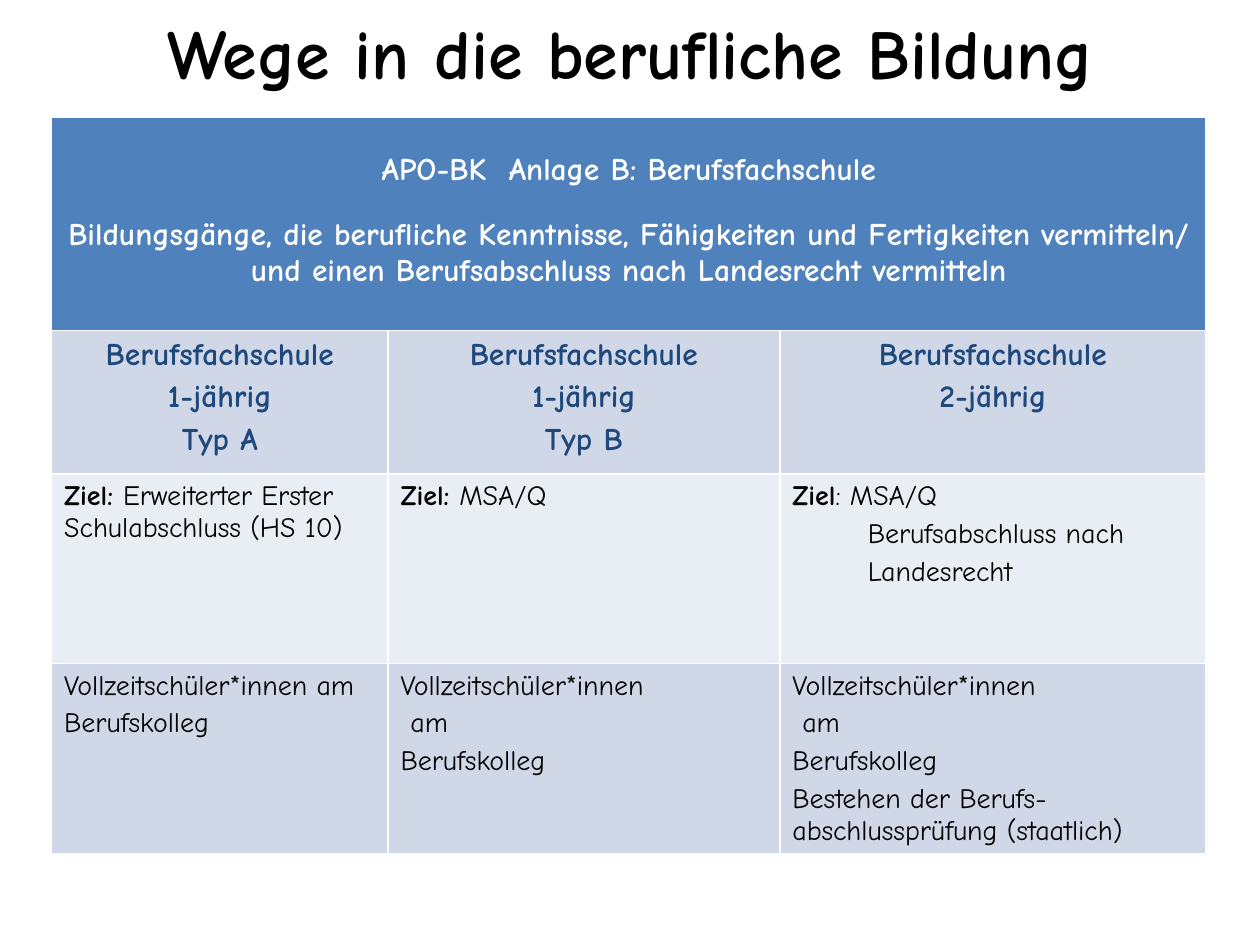
from pptx import Presentation
from pptx import util as u
from pptx.dml.color import RGBColor
from pptx.enum import text

FONT = "Comic Neue"
BLACK, WHITE, NAVY = "000000", "FFFFFF", "1F497D"
BLUE, BAND, PALE = "4F81BD", "D0D8E8", "E9EDF4"


def paint(obj, hue):
    obj.rgb = RGBColor.from_string(hue)


def write(frame, paras, size, hue, align):
    for n, (indent, runs) in enumerate(paras):
        para = frame.paragraphs[0] if n == 0 else frame.add_paragraph()
        para.alignment = align
        para.space_before = u.Pt(size * 0.2 if n else 0)
        if indent:
            para._p.get_or_add_pPr().set("marL", str(u.Cm(indent)))
        for words, bold in runs:
            run = para.add_run()
            run.text = words
            run.font.name = FONT
            run.font.size = u.Pt(size)
            run.font.bold = bold
            paint(run.font.color, hue)


MID, LEFT = text.PP_ALIGN.CENTER, text.PP_ALIGN.LEFT

deck = Presentation()
deck.slide_width, deck.slide_height = u.Cm(25.4), u.Cm(19.05)
slide = deck.slides.add_slide(deck.slide_layouts[5])

title = slide.shapes.title
title.left, title.top = u.Cm(1.27), u.Cm(-0.56)
title.width, title.height = u.Cm(22.86), u.Cm(3.18)
title.text_frame.vertical_anchor = text.MSO_ANCHOR.MIDDLE
write(title.text_frame, [(0, [("Wege in die berufliche Bildung", True)])], 40, BLACK, MID)

wide = [6.78, 7.9, 8.59]
high = [4.3, 2.9, 3.82, 3.82]
grid = slide.shapes.add_table(
    4, 3, u.Cm(1.04), u.Cm(2.36), u.Cm(sum(wide)), u.Cm(sum(high))
).table
for col, size in zip(grid.columns, wide):
    col.width = u.Cm(size)
for row, size in zip(grid.rows, high):
    row.height = u.Cm(size)

head = grid.cell(0, 0)
head.merge(grid.cell(0, 2))
head.fill.solid()
paint(head.fill.fore_color, BLUE)
head.margin_top = u.Cm(0.7)
write(head.text_frame, [
    (0, [("APO-BK  Anlage B: Berufsfachschule", True)]),
    (0, [("Bildungsgänge, die berufliche Kenntnisse, Fähigkeiten und Fertigkeiten "
          "vermitteln/ und einen Berufsabschluss nach Landesrecht vermitteln", True)]),
], 18, WHITE, MID)
head.text_frame.paragraphs[1].space_before = u.Pt(16.6)

kinds = [["1-jährig", "Typ A"], ["1-jährig", "Typ B"], ["2-jährig"]]
types = [[(0, [(line, True)]) for line in ["Berufsfachschule"] + kind] for kind in kinds]
goals = [
    [(0, [("Ziel: ", True), ("Erweiterter Erster Schulabschluss (HS 10)", False)])],
    [(0, [("Ziel: ", True), ("MSA/Q", False)])],
    [(0, [("Ziel", True), (": MSA/Q", False)]),
     (1.52, [("Berufsabschluss nach", False)]),
     (1.52, [("Landesrecht", False)])],
]
split = [
    (0, [("Vollzeitschüler*innen", False)]),
    (0.2, [("am", False)]),
    (0, [("Berufskolleg", False)]),
]
pupils = [
    [(0, [("Vollzeitschüler*innen am", False)]), (0, [("Berufskolleg", False)])],
    split,
    split + [(0, [("Bestehen der Berufs-abschlussprüfung (staatlich)", False)])],
]

rows = [
    (types, BAND, 18, NAVY, MID),
    (goals, PALE, 16, BLACK, LEFT),
    (pupils, BAND, 16, BLACK, LEFT),
]
for r, (cells, back, size, hue, align) in enumerate(rows, 1):
    for c, paras in enumerate(cells):
        cell = grid.cell(r, c)
        cell.fill.solid()
        paint(cell.fill.fore_color, back)
        write(cell.text_frame, paras, size, hue, align)

deck.save("out.pptx")
